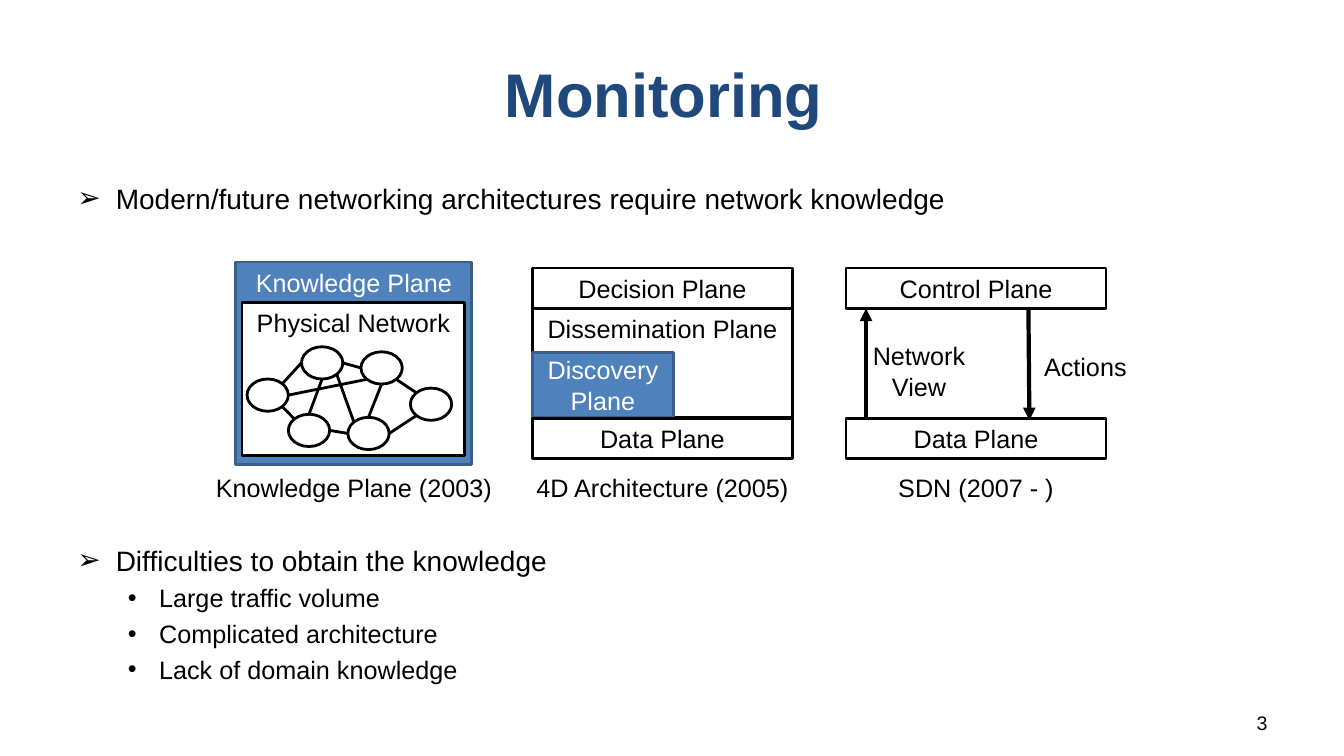
from math import sqrt

from pptx import Presentation
from pptx.dml.color import RGBColor
from pptx.enum.shapes import MSO_CONNECTOR as Connector, MSO_SHAPE as Shape
from pptx.enum.text import MSO_ANCHOR as Anchor, PP_ALIGN as Align
from pptx.oxml.ns import qn
from pptx.util import Inches, Pt
from lxml import etree

BLACK = RGBColor(0x00, 0x00, 0x00)
WHITE = RGBColor(0xFF, 0xFF, 0xFF)
NAVY = RGBColor(0x1F, 0x49, 0x7D)
BLUE = RGBColor(0x4F, 0x81, 0xBD)
DARK_BLUE = RGBColor(0x3A, 0x5F, 0x8C)

FONT = "Arial"
PLANE_WIDTH, PLANE_HEIGHT = 2.58, 0.4
NODE_WIDTH, NODE_HEIGHT = 0.41, 0.32
CAPTION_WIDTH = 3.1

DIAGONAL = sqrt(0.5)
SIDES = {
    "top": (0, -1), "bottom": (0, 1), "left": (-1, 0), "right": (1, 0),
    "top left": (-DIAGONAL, -DIAGONAL), "top right": (DIAGONAL, -DIAGONAL),
    "bottom left": (-DIAGONAL, DIAGONAL), "bottom right": (DIAGONAL, DIAGONAL),
}
NODES = {
    "west": (0.05, 0.76), "southwest": (0.46, 1.11), "northwest": (0.59, 0.44),
    "northeast": (1.18, 0.49), "southeast": (1.05, 1.14), "east": (1.67, 0.85),
}
LINKS = [
    ("west", "top right", "northwest", "left"),
    ("west", "bottom right", "southwest", "top left"),
    ("northwest", "right", "northeast", "left"),
    ("southeast", "top left", "northwest", "bottom right"),
    ("southwest", "right", "southeast", "left"),
    ("west", "right", "northeast", "bottom left"),
    ("east", "top left", "northeast", "bottom right"),
    ("southeast", "top", "northeast", "bottom"),
    ("southeast", "right", "east", "bottom left"),
    ("southwest", "top", "northwest", "bottom"),
]


def style_para(para, text, size=18, color=BLACK, align=Align.CENTER, bold=False):
    para.text = text
    para.alignment = align
    para.font.name = FONT
    para.font.size = Pt(size)
    para.font.color.rgb = color
    para.font.bold = bold


def add_bullet(para, char, margin, hang):
    props = para._p.get_or_add_pPr()
    props.set("marL", str(Inches(margin)))
    props.set("indent", str(-Inches(hang)))
    etree.SubElement(props, qn("a:buFont")).set("typeface", FONT)
    etree.SubElement(props, qn("a:buChar")).set("char", char)


def add_text(shapes, box, text, anchor=Anchor.TOP, **style):
    frame = shapes.add_textbox(*map(Inches, box)).text_frame
    frame.word_wrap = True
    frame.vertical_anchor = anchor
    style_para(frame.paragraphs[0], text, **style)
    return frame


def add_block(shapes, kind, box, text="", anchor=Anchor.MIDDLE, highlight=False):
    block = shapes.add_shape(kind, *map(Inches, box))
    block.shadow.inherit = False
    block.fill.solid()
    block.fill.fore_color.rgb = BLUE if highlight else WHITE
    block.line.color.rgb = DARK_BLUE if highlight else BLACK
    block.line.width = Pt(2)
    if text:
        block.text_frame.word_wrap = True
        block.text_frame.vertical_anchor = anchor
        style_para(block.text_frame.paragraphs[0], text,
                   color=WHITE if highlight else BLACK)


def add_line(shapes, start, end, width=2, arrow=False):
    line = shapes.add_connector(Connector.STRAIGHT, *map(Inches, (*start, *end)))
    line.line.color.rgb = BLACK
    line.line.width = Pt(width)
    if arrow:
        etree.SubElement(line.line._get_or_add_ln(), qn("a:tailEnd")).set("type", "triangle")
    etree.SubElement(line._element.spPr, qn("a:effectLst"))


def add_title(page, box):
    title = page.shapes.title
    title.left, title.top, title.width, title.height = map(Inches, box)
    title.text_frame.vertical_anchor = Anchor.MIDDLE
    style_para(title.text_frame.paragraphs[0], "Monitoring ", 44, NAVY, bold=True)


def add_bullets(page, box, heading, items=()):
    frame = add_text(page.shapes, box, heading, size=20, align=Align.LEFT)
    add_bullet(frame.paragraphs[0], "➢", 0.38, 0.38)
    for item in items:
        para = frame.add_paragraph()
        para.level = 1
        para.space_before = Pt(4)
        style_para(para, item, align=Align.LEFT)
        add_bullet(para, "•", 0.81, 0.31)


def add_caption(page, center, top, text):
    add_text(page.shapes, (center - CAPTION_WIDTH / 2, top, CAPTION_WIDTH, 0.33), text)


def add_network(shapes, left, top):
    def node_point(name, side):
        x, y = NODES[name]
        dx, dy = SIDES[side]
        return (left + x + NODE_WIDTH / 2 * (1 + dx),
                top + y + NODE_HEIGHT / 2 * (1 + dy))

    for x, y in NODES.values():
        add_block(shapes, Shape.OVAL, (left + x, top + y, NODE_WIDTH, NODE_HEIGHT))
    for start, start_side, end, end_side in LINKS:
        add_line(shapes, node_point(start, start_side), node_point(end, end_side))


def add_knowledge_plane(page, left, top):
    shapes = page.shapes.add_group_shape().shapes
    add_block(shapes, Shape.RECTANGLE, (left, top, 2.34, 2.01),
              "Knowledge Plane", Anchor.TOP, highlight=True)
    add_block(shapes, Shape.RECTANGLE, (left + 0.06, top + 0.4, 2.21, 1.52),
              "Physical Network", Anchor.TOP)
    add_network(shapes, left + 0.06, top + 0.4)
    add_caption(page, left + 1.17, top + 2.04, "Knowledge Plane (2003)")


def add_outer_planes(shapes, left, top, upper, lower):
    for offset, text in ((0, upper), (1.49, lower)):
        add_block(shapes, Shape.RECTANGLE,
                  (left, top + offset, PLANE_WIDTH, PLANE_HEIGHT), text)


def add_four_planes(page, left, top):
    shapes = page.shapes.add_group_shape().shapes
    add_block(shapes, Shape.RECTANGLE, (left, top + PLANE_HEIGHT, PLANE_WIDTH, 1.08),
              "Dissemination Plane", Anchor.TOP)
    add_block(shapes, Shape.RECTANGLE, (left, top + 0.84, 1.4, 0.64),
              "Discovery Plane", highlight=True)
    add_outer_planes(shapes, left, top, "Decision Plane", "Data Plane")
    add_caption(page, left + PLANE_WIDTH / 2, top + 1.98, "4D Architecture (2005)")


def add_sdn(page, left, top):
    add_outer_planes(page.shapes.add_group_shape().shapes, left, top,
                     "Control Plane", "Data Plane")
    add_caption(page, left + PLANE_WIDTH / 2, top + 1.98, "SDN (2007 - )")
    upper, lower = top + PLANE_HEIGHT, top + 1.51
    add_line(page.shapes, (left + 0.2, lower), (left + 0.2, upper), 3, arrow=True)
    add_text(page.shapes, (left + 0.16, top + 0.67, 1.13, 0.6), "Network View")
    add_line(page.shapes, (left + 1.81, upper), (left + 1.82, lower), 3, arrow=True)
    add_text(page.shapes, (left + 1.81, top + 0.68, 1.13, 0.6), "Actions", Anchor.MIDDLE)


def main():
    deck = Presentation()
    deck.slide_width, deck.slide_height = Inches(13.33), Inches(7.5)
    page = deck.slides.add_slide(deck.slide_layouts[5])
    add_title(page, (0.67, 0.3, 12, 1.25))
    add_bullets(page, (0.67, 1.75, 12, 0.5),
                "Modern/future networking architectures require network knowledge")
    add_knowledge_plane(page, 2.34, 2.6)
    add_four_planes(page, 5.28, 2.66)
    add_sdn(page, 8.39, 2.66)
    add_bullets(page, (0.67, 5.34, 12, 0.82), "Difficulties to obtain the knowledge",
                ["Large traffic volume", "Complicated architecture",
                 "Lack of domain knowledge"])
    add_text(page.shapes, (9.56, 7, 3.11, 0.35), "3", size=14, align=Align.RIGHT)
    deck.save("out.pptx")


if __name__ == "__main__":
    main()
